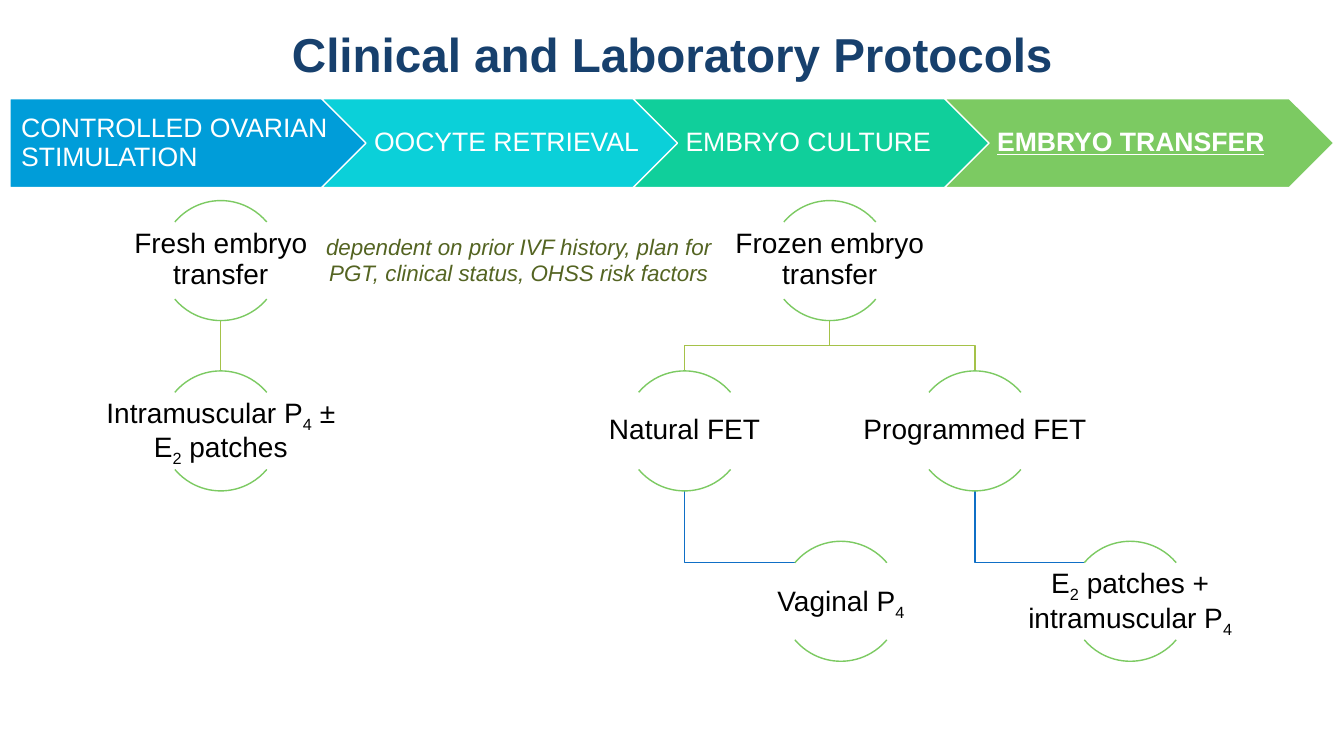
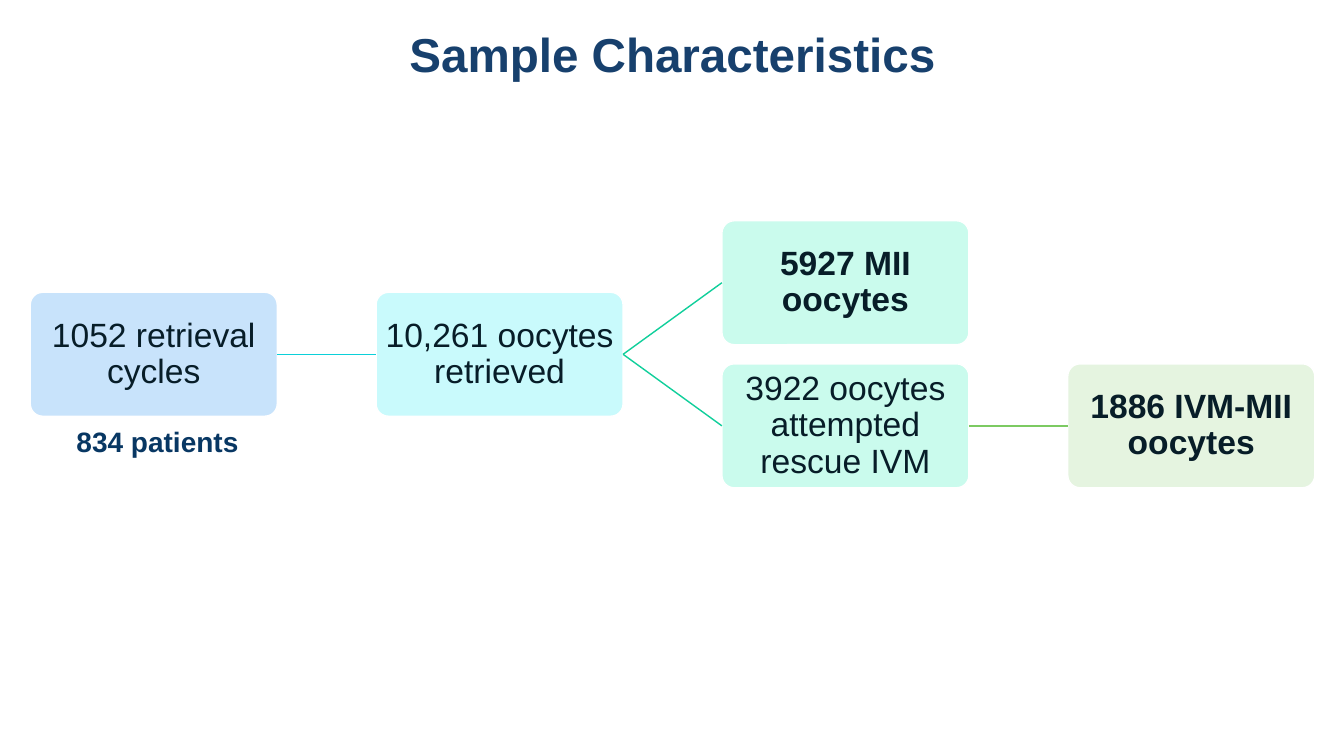
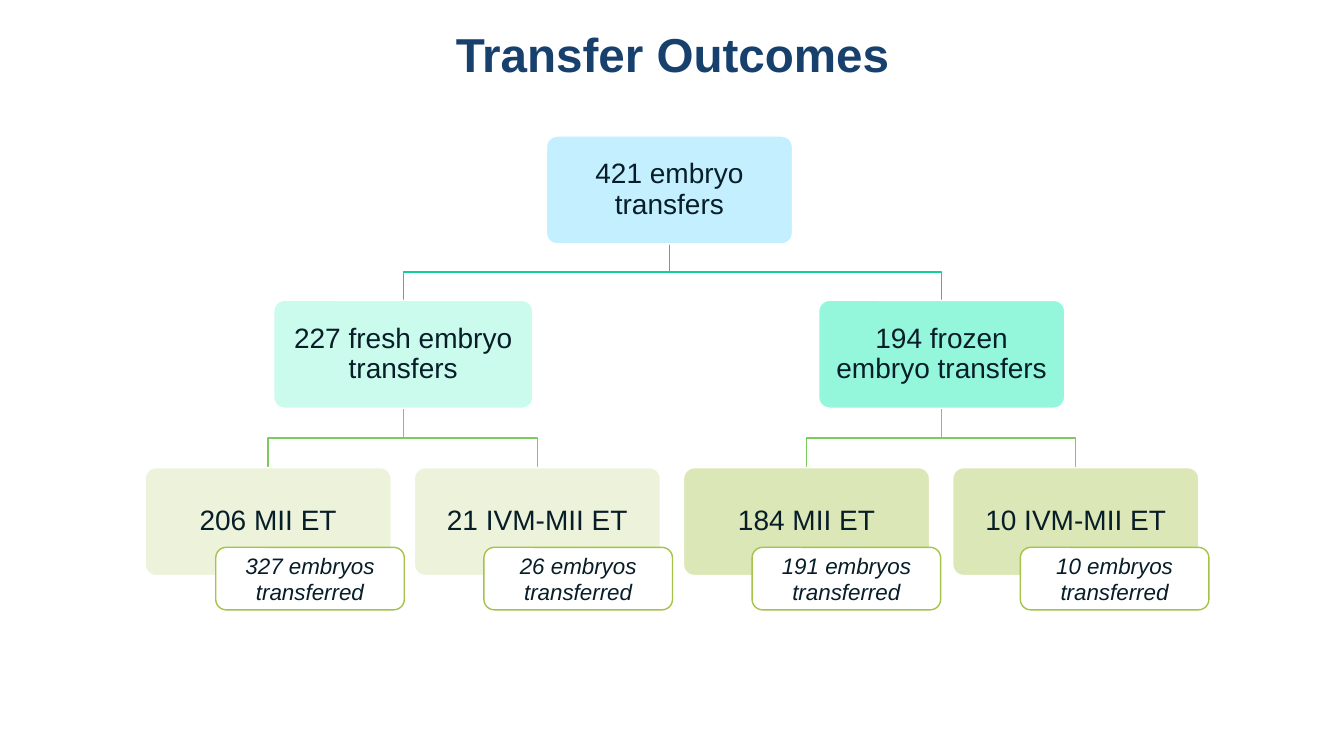
from dataclasses import dataclass, field

from lxml import etree
from pptx import Presentation, util as u
from pptx.dml import color as dml
from pptx.enum import shapes, text
from pptx.oxml import ns

SHAPE = shapes.MSO_SHAPE
CENTER, LEFT = text.PP_ALIGN.CENTER, text.PP_ALIGN.LEFT
MIDDLE, TOP = text.MSO_ANCHOR.MIDDLE, text.MSO_ANCHOR.TOP


@dataclass(frozen=True)
class Theme:
    font: str = "Arial"
    title: str = "17406D"
    ink: str = "071D28"
    black: str = "000000"
    white: str = "FFFFFF"
    navy: str = "083763"
    blue: str = "009DD9"
    royal: str = "0F6FC6"
    cyan: str = "0BD0D9"
    teal: str = "10CF9B"
    green: str = "7CCA62"
    olive: str = "A5C249"
    dark_olive: str = "546422"
    pale_blue: str = "C8E3FB"
    pale_sky: str = "C4EFFF"
    pale_cyan: str = "C9FAFC"
    pale_teal: str = "CAFBED"
    mint: str = "94F7DC"
    pale_green: str = "E5F4E0"
    pale_olive: str = "EDF3DB"
    soft_olive: str = "DBE7B6"
    title_size: int = 34
    large_size: int = 24
    body_size: int = 20
    stage_size: int = 19
    note_size: int = 16
    line_width: int = 1


THEME = Theme()


@dataclass(frozen=True)
class Style:
    size: int
    color: str
    font: dict = field(default_factory=dict)
    align: int = CENTER
    anchor: int = MIDDLE
    spacing: float = 0.9
    insets: tuple = (0.1, 0.05, 0.1, 0.05)
    wrap: bool = True


@dataclass(frozen=True)
class Area:
    left: float
    top: float
    width: float
    height: float

    def lengths(self) -> tuple:
        return tuple(u.Inches(v) for v in (self.left, self.top, self.width, self.height))


@dataclass(frozen=True)
class Stage:
    label: str
    fill: str
    font: dict = field(default_factory=dict)


@dataclass(frozen=True)
class Node:
    label: str
    center: float
    row: int


@dataclass(frozen=True)
class Step:
    label: str
    column: int
    row: int
    fill: str
    font: dict = field(default_factory=dict)


@dataclass(frozen=True)
class Branch:
    label: str
    center: float
    row: int
    fill: str
    width: float = 2.44


def rgb(value: str) -> dml.RGBColor:
    return dml.RGBColor.from_string(value)


def write(frame, words: str, style: Style) -> None:
    left, top, right, bottom = map(u.Inches, style.insets)
    settings = {
        "word_wrap": style.wrap, "auto_size": text.MSO_AUTO_SIZE.NONE,
        "vertical_anchor": style.anchor, "margin_left": left,
        "margin_top": top, "margin_right": right, "margin_bottom": bottom,
    }
    for name, value in settings.items():
        setattr(frame, name, value)
    para = frame.paragraphs[0]
    para.alignment, para.line_spacing = style.align, style.spacing
    look = {"name": THEME.font, "size": u.Pt(style.size), **style.font}
    for index, piece in enumerate(words.split("|")):
        if not piece:
            continue
        span = para.add_run()
        span.text = piece
        for name, value in look.items():
            setattr(span.font, name, value)
        span.font.color.rgb = rgb(style.color)
        if index % 2:
            span._r.get_or_add_rPr().set("baseline", "-25000")


def paint_line(item, color: str) -> None:
    item.line.color.rgb = rgb(color)
    item.line.width = u.Pt(THEME.line_width)


def add_page(deck, title: str):
    page = deck.slides.add_slide(deck.slide_layouts[5])
    box = page.shapes.title
    box.left, box.top, box.width, box.height = Area(0.19, 0.2, 12.96, 0.74).lengths()
    write(box.text_frame, title, Style(THEME.title_size, THEME.title, {"bold": True}))
    return page


def add_text(page, area: Area, words: str, style: Style) -> None:
    write(page.shapes.add_textbox(*area.lengths()).text_frame, words, style)


def add_box(page, kind, area: Area, fill: str, outline: str, words: str, style: Style):
    box = page.shapes.add_shape(kind, *area.lengths())
    box.shadow.inherit = False
    box.fill.solid()
    box.fill.fore_color.rgb = rgb(fill)
    paint_line(box, outline)
    write(box.text_frame, words, style)
    return box


def add_card(page, area: Area, fill: str, words: str, style: Style):
    card = add_box(page, SHAPE.ROUNDED_RECTANGLE, area, fill, THEME.white, words, style)
    card.adjustments[0] = 0.1
    return card


def add_line(page, start: tuple, end: tuple, color: str):
    line = page.shapes.add_connector(
        shapes.MSO_CONNECTOR.STRAIGHT, *(u.Inches(v) for v in start + end))
    paint_line(line, color)
    etree.SubElement(line._element.spPr, ns.qn("a:effectLst"))
    return line


def add_elbow(page, points: list, color: str) -> None:
    corners = [(u.Inches(x), u.Inches(y)) for x, y in points]
    builder = page.shapes.build_freeform(*corners[0])
    builder.add_line_segments(corners[1:], close=False)
    elbow = builder.convert_to_shape()
    elbow.shadow.inherit = False
    elbow.fill.background()
    paint_line(elbow, color)


def add_fork(page, x: float, top: float, ends: tuple, bottom: float, color: str) -> None:
    middle = (top + bottom) / 2
    for end in ends:
        add_elbow(page, [(x, top), (x, middle), (end, middle), (end, bottom)], color)


def add_stages(page) -> None:
    stages = [
        Stage("CONTROLLED OVARIAN STIMULATION", THEME.blue),
        Stage("OOCYTE RETRIEVAL", THEME.cyan),
        Stage("EMBRYO CULTURE", THEME.teal),
        Stage("EMBRYO TRANSFER", THEME.green, {"bold": True, "underline": True}),
    ]
    for index, stage in enumerate(stages):
        kind = SHAPE.CHEVRON if index else SHAPE.PENTAGON
        inset = 0.08 if index else 0.11
        style = Style(THEME.stage_size, THEME.white, stage.font, LEFT,
                      insets=(inset, 0.06, 0.03, 0.06))
        add_box(page, kind, Area(0.1 + 3.09 * index, 0.98, 3.86, 0.88),
                stage.fill, THEME.white, stage.label, style)


def add_protocols(deck) -> None:
    page = add_page(deck, "Clinical and Laboratory Protocols")
    add_stages(page)
    diameter = 1.19
    tops = [1.99 + 1.69 * row for row in range(3)]
    fresh = Node("Fresh embryo transfer", 2.19, 0)
    muscular = Node("Intramuscular P|4| ± E|2| patches", 2.19, 1)
    frozen = Node("Frozen embryo transfer", 8.23, 0)
    natural = Node("Natural FET", 6.79, 1)
    vaginal = Node("Vaginal P|4", 8.34, 2)
    programmed = Node("Programmed FET", 9.67, 1)
    patches = Node("E|2| patches + intramuscular P|4", 11.21, 2)

    for parent, child in ((natural, vaginal), (programmed, patches)):
        level = tops[child.row] + 0.21
        add_elbow(page, [(parent.center, tops[parent.row] + diameter),
                         (parent.center, level), (child.center - 0.46, level)], THEME.royal)
    add_fork(page, frozen.center, tops[0] + diameter,
             (natural.center, programmed.center), tops[1], THEME.olive)
    add_line(page, (fresh.center, tops[0] + diameter), (fresh.center, tops[1]), THEME.olive)

    style = Style(THEME.body_size, THEME.black, insets=(0.01,) * 4)
    for node in (fresh, muscular, frozen, natural, vaginal, programmed, patches):
        top = tops[node.row]
        circle = Area(node.center - diameter / 2, top, diameter, diameter)
        for angles in ((132, 192), (24, 84)):
            arc = page.shapes.add_shape(SHAPE.ARC, *circle.lengths())
            arc.shadow.inherit = False
            arc.fill.background()
            paint_line(arc, THEME.green)
            arc.adjustments[0], arc.adjustments[1] = angles
        add_text(page, Area(node.center - diameter, top + 0.21, 2 * diameter, 0.76),
                 node.label, style)
    add_text(page, Area(3.04, 2.26, 4.21, 0.64),
             "dependent on prior IVF history, plan for PGT, clinical status, OHSS risk factors",
             Style(THEME.note_size, THEME.dark_olive, {"italic": True},
                   anchor=TOP, spacing=1.0))


def add_sample(deck) -> None:
    page = add_page(deck, "Sample Characteristics")
    bold = {"bold": True}
    steps = [
        Step("1052 retrieval cycles", 0, 1, THEME.pale_blue),
        Step("10,261 oocytes retrieved", 1, 1, THEME.pale_cyan),
        Step("5927 MII oocytes", 2, 0, THEME.pale_teal, bold),
        Step("3922 oocytes attempted rescue IVM", 2, 2, THEME.pale_teal),
        Step("1886 IVM-MII oocytes", 3, 2, THEME.pale_green, bold),
    ]
    cards = [
        add_card(page, Area(0.3 + 3.43 * step.column, 2.19 + 0.71 * step.row, 2.45, 1.23),
                 step.fill, step.label,
                 Style(THEME.large_size, THEME.ink, step.font, insets=(0.02,) * 4))
        for step in steps
    ]
    links = ((0, 1, THEME.cyan), (1, 2, THEME.teal), (1, 3, THEME.teal), (3, 4, THEME.green))
    for source, target, color in links:
        line = add_line(page, (0, 0), (1, 1), color)
        line.begin_connect(cards[source], 3)
        line.end_connect(cards[target], 1)
    add_text(page, Area(0.66, 4.16, 1.82, 0.44), "834 patients",
             Style(THEME.body_size, THEME.navy, bold, LEFT, TOP, 1.0, wrap=False))


def add_outcomes(deck) -> None:
    page = add_page(deck, "Transfer Outcomes")
    height = 1.07
    tops = (1.35, 2.98, 4.64)
    leaf_centers = [2.66 + 2.67 * index for index in range(4)]
    root = Branch("421 embryo transfers", 6.64, 0, THEME.pale_sky)
    fresh = Branch("227 fresh embryo transfers", 4, 1, THEME.pale_teal, 2.57)
    frozen = Branch("194 frozen embryo transfers", 9.34, 1, THEME.mint)
    leaf_labels = ("206 MII ET", "21 IVM-MII ET", "184 MII ET", "10 IVM-MII ET")
    leaf_fills = (THEME.pale_olive,) * 2 + (THEME.soft_olive,) * 2
    leaves = [Branch(label, center, 2, fill)
              for label, center, fill in zip(leaf_labels, leaf_centers, leaf_fills)]

    forks = ((root, (fresh, frozen), THEME.teal),
             (fresh, leaves[:2], THEME.green), (frozen, leaves[2:], THEME.green))
    for parent, children, color in forks:
        add_fork(page, parent.center, tops[parent.row] + height,
                 tuple(child.center for child in children), tops[parent.row + 1], color)
    style = Style(THEME.body_size, THEME.ink, insets=(0.08,) * 4)
    for branch in (root, fresh, frozen, *leaves):
        add_card(page, Area(branch.center - branch.width / 2, tops[branch.row],
                            branch.width, height), branch.fill, branch.label, style)

    note = Style(THEME.note_size, THEME.ink, {"italic": True}, spacing=1.0)
    for index, count in enumerate((327, 26, 191, 10)):
        add_box(page, SHAPE.ROUNDED_RECTANGLE, Area(2.14 + 2.66 * index, 5.43, 1.87, 0.62),
                THEME.white, THEME.olive, f"{count} embryos transferred", note)


def main() -> None:
    deck = Presentation()
    deck.slide_width, deck.slide_height = u.Inches(13.33), u.Inches(7.5)
    for build in (add_protocols, add_sample, add_outcomes):
        build(deck)
    deck.save("out.pptx")


if __name__ == "__main__":
    main()
